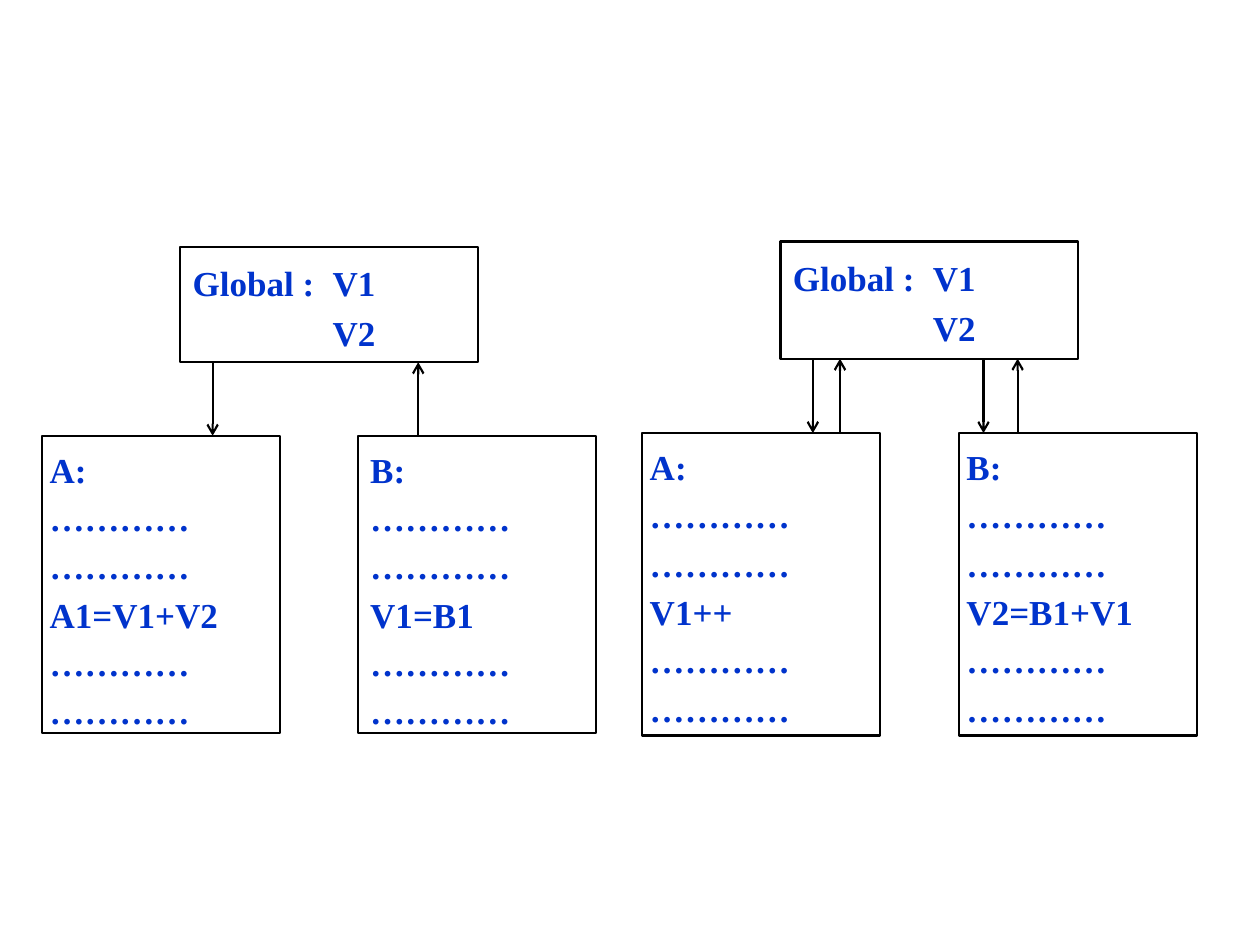
"""Draw two panels of processes that share global variables."""
from dataclasses import dataclass

from lxml.etree import SubElement
from pptx import Presentation
from pptx.dml.color import RGBColor as Rgb
from pptx.enum.shapes import MSO_CONNECTOR as Link, MSO_SHAPE as Form
from pptx.enum.text import MSO_ANCHOR as Anchor, PP_ALIGN as Align
from pptx.oxml.ns import qn
from pptx.shapes.autoshape import Shape
from pptx.slide import Slide
from pptx.util import Pt


@dataclass(frozen=True)
class Theme:
    """Colours, font and sizes."""
    ink: Rgb = Rgb(0x00, 0x33, 0xCC)
    edge: Rgb = Rgb(0, 0, 0)
    fill: Rgb = Rgb(255, 255, 255)
    font: str = "Times New Roman"
    size: float = 20
    line: float = 1.25


@dataclass(frozen=True)
class Arrow:
    """An arrow at an offset from the panel's left edge."""
    dx: float
    down: bool


@dataclass(frozen=True)
class Task:
    """A process box with one statement."""
    name: str
    code: str
    dx: float
    inset: float = 4.3


@dataclass(frozen=True)
class Panel:
    """A global box above its process boxes."""
    left: float
    top: float
    high: float
    low: float
    tall: float
    tasks: tuple[Task, ...]
    arrows: tuple[Arrow, ...]


THEME = Theme()
DOTS = "…………"
INDENT = 80
PANELS = (
    Panel(24, 141, 66, 249, 170,
          (Task("A:", "A1=V1+V2", 0), Task("B:", "V1=B1", 180.5, 7.2)),
          (Arrow(97.5, True), Arrow(215, False))),
    Panel(367, 138, 67, 247.5, 172.8,
          (Task("A:", "V1++", 0), Task("B:", "V2=B1+V1", 181)),
          (Arrow(97.5, True), Arrow(113, False),
           Arrow(195, True), Arrow(214.5, False))),
)


def add_box(slide: Slide, x: float, y: float, w: float, h: float,
            lines: list[str], gap: float, inset: float = 7.2) -> Shape:
    """Add an outlined box with lines of bold text."""
    box = slide.shapes.add_shape(Form.RECTANGLE, Pt(x), Pt(y), Pt(w), Pt(h))
    box.shadow.inherit = False
    box.fill.solid()
    box.fill.fore_color.rgb = THEME.fill
    box.line.color.rgb = THEME.edge
    box.line.width = Pt(THEME.line)
    frame = box.text_frame
    frame.word_wrap = True
    frame.vertical_anchor = Anchor.TOP
    frame.margin_left = Pt(inset)
    frame.margin_right = Pt(1.5)
    frame.margin_top = frame.margin_bottom = Pt(3.6)
    frame.text = "\n".join(lines)
    for para in frame.paragraphs:
        para.alignment = Align.JUSTIFY
        para.line_spacing = gap
        for run in para.runs:
            run.font.name = THEME.font
            run.font.size = Pt(THEME.size)
            run.font.bold = True
            run.font.color.rgb = THEME.ink
    return box


def add_global(slide: Slide, panel: Panel) -> None:
    """Add the global box with its variables in one column."""
    box = add_box(slide, panel.left + 79, panel.top, 170, panel.high,
                  ["Global :\tV1", "V2"], 1.2)
    for para, hang in zip(box.text_frame.paragraphs, (-INDENT, 0)):
        props = para._p.get_or_add_pPr()
        props.set("marL", str(Pt(INDENT)))
        props.set("indent", str(Pt(hang)))


def add_arrow(slide: Slide, x: float, start: float, end: float) -> None:
    """Add a vertical arrow that points at its end."""
    line = slide.shapes.add_connector(
        Link.STRAIGHT, Pt(x), Pt(start), Pt(x), Pt(end))
    line.line.color.rgb = THEME.edge
    line.line.width = Pt(THEME.line)
    SubElement(line.line._get_or_add_ln(), qn("a:tailEnd"), type="arrow")
    SubElement(line._element.spPr, qn("a:effectLst"))


def add_panel(slide: Slide, panel: Panel) -> None:
    """Add one panel with its boxes and arrows."""
    add_global(slide, panel)
    for task in panel.tasks:
        lines = [task.name, DOTS, DOTS, task.code, DOTS, DOTS]
        add_box(slide, panel.left + task.dx, panel.low, 136, panel.tall,
                lines, 1.15, task.inset)
    ends = (panel.top + panel.high, panel.low)
    for arrow in panel.arrows:
        start, end = ends if arrow.down else ends[::-1]
        add_arrow(slide, panel.left + arrow.dx, start, end)


def main() -> None:
    """Build and save the slide."""
    deck = Presentation()
    deck.slide_width, deck.slide_height = Pt(720), Pt(540)
    slide = deck.slides.add_slide(deck.slide_layouts[6])
    for panel in PANELS:
        add_panel(slide, panel)
    deck.save("out.pptx")


if __name__ == "__main__":
    main()
